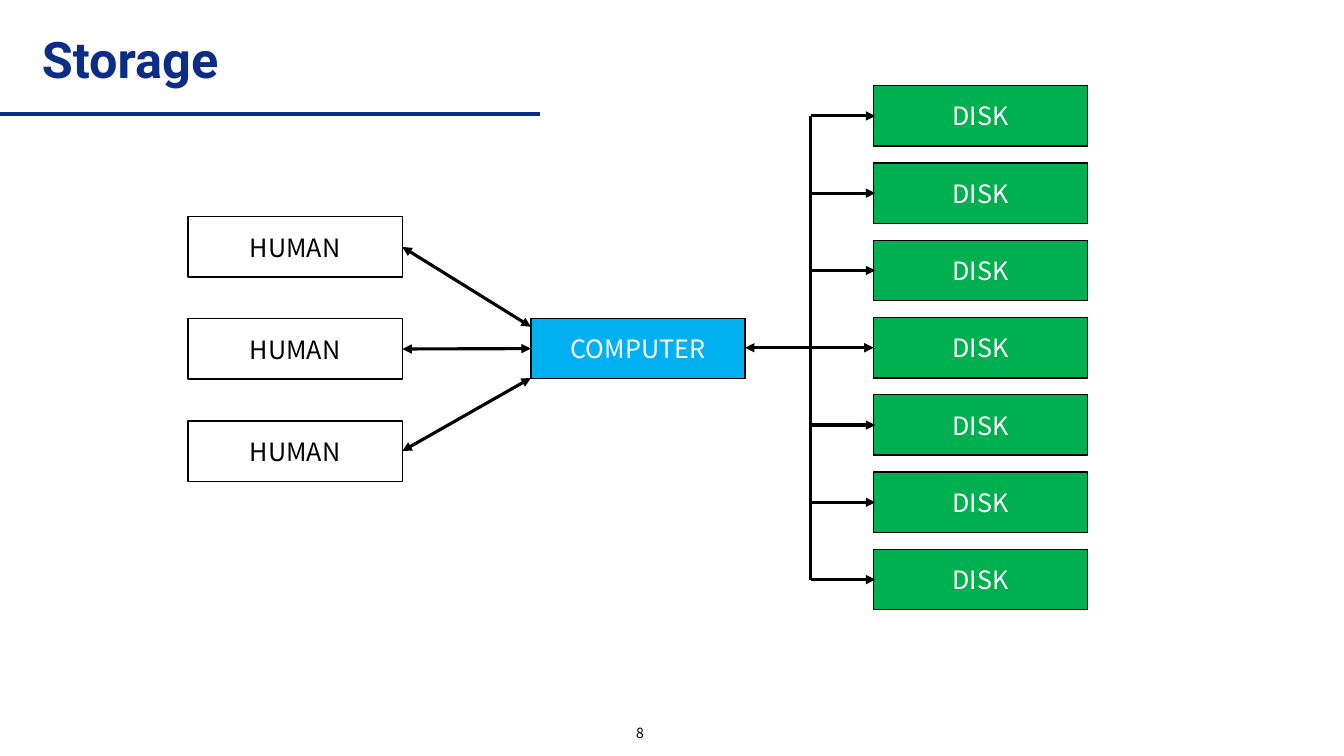
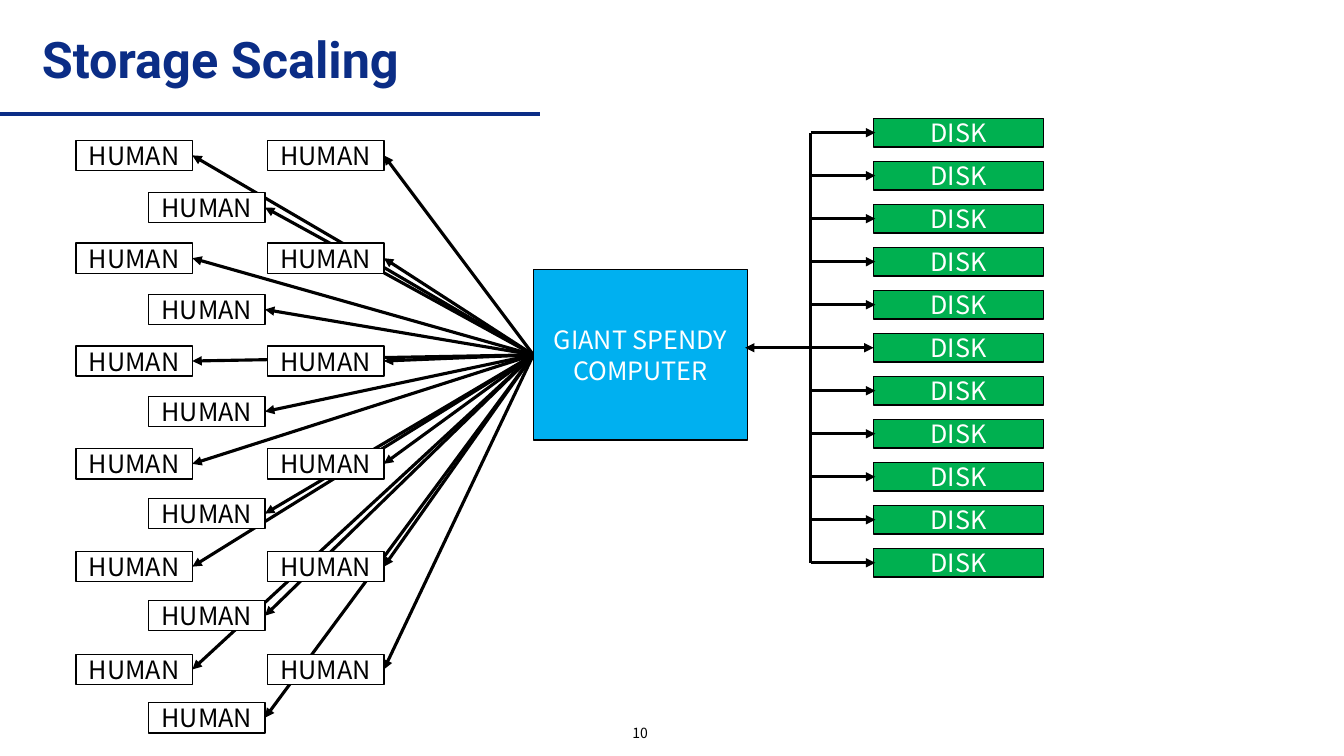
from lxml.etree import SubElement
from pptx import Presentation
from pptx.dml.color import RGBColor
from pptx.enum.shapes import MSO_CONNECTOR as LINE, MSO_SHAPE as SHAPE
from pptx.enum.text import MSO_ANCHOR as ANCHOR, PP_ALIGN as ALIGN
from pptx.oxml.ns import qn
from pptx.util import Inches, Pt

COLS, ROWS = 160, 90
WIDTH, HEIGHT = Inches(13.33), Inches(7.5)
COLORS = {"navy": "0B2D86", "black": "000000", "white": "FFFFFF",
          "blue": "00B0F0", "green": "00B050"}
BODY_FONT, TITLE_FONT = "Noto Sans CJK KR", "Roboto"
BLANK = 6

COMPUTER_W = 25.5
LINK_X, BUS_X, DISK_X = 88.7, 96.5, 104


def color(name):
    return RGBColor.from_string(COLORS[name])


class Deck:
    """Holds the style and the current slide; lengths are grid columns and rows."""

    def __init__(self):
        self.prs = Presentation()
        self.prs.slide_width, self.prs.slide_height = WIDTH, HEIGHT
        self.slide = None

    def emu(self, x, y):
        return int(x * WIDTH / COLS), int(y * HEIGHT / ROWS)

    def new_slide(self, title, number):
        self.slide = self.prs.slides.add_slide(self.prs.slide_layouts[BLANK])
        self.line((0, 13.6), (64.3, 13.6), "navy", 3)
        p = self.text(title, 3.8, 2.9, 110, 8.9, 36, "navy", TITLE_FONT)
        p.font.bold = True
        p.line_spacing = 0.9
        p = self.text(number, 58.2, 85.3, 36, 3.8, 10, "black")
        p.alignment = ALIGN.CENTER

    def set_text(self, sp, text, size, ink, font=BODY_FONT):
        tf = sp.text_frame
        tf.word_wrap = True
        tf.vertical_anchor = ANCHOR.MIDDLE
        p = tf.paragraphs[0]
        p.text = text
        p.font.size, p.font.name = Pt(size), font
        p.font.color.rgb = color(ink)
        return p

    def text(self, text, x, y, w, h, size, ink, font=BODY_FONT):
        sp = self.slide.shapes.add_textbox(*self.emu(x, y), *self.emu(w, h))
        return self.set_text(sp, text, size, ink, font)

    def box(self, text, x, middle, w, h, fill, ink="white"):
        """Draw a labelled box centred on the row `middle`."""
        sp = self.slide.shapes.add_shape(
            SHAPE.RECTANGLE, *self.emu(x, middle - h / 2), *self.emu(w, h))
        sp.shadow.inherit = False
        sp.fill.solid()
        sp.fill.fore_color.rgb = color(fill)
        sp.line.color.rgb = color("black")
        sp.line.width = Pt(1)
        self.set_text(sp, text, 18, ink).alignment = ALIGN.CENTER

    def line(self, start, end, ink="black", width=2.25, arrows=()):
        """Draw a line; `arrows` lists "headEnd" (start) and "tailEnd" (end), in that order."""
        c = self.slide.shapes.add_connector(
            LINE.STRAIGHT, *self.emu(*start), *self.emu(*end))
        c.line.color.rgb = color(ink)
        c.line.width = Pt(width)
        spPr = c.element.spPr
        for arrow in arrows:
            SubElement(spPr.find(qn("a:ln")), qn(f"a:{arrow}"), type="triangle")
        SubElement(spPr, qn("a:effectLst"))

    def human(self, x, middle, w, h):
        self.box("HUMAN", x, middle, w, h, "white", "black")

    def disks(self, count, first, pitch, w, h):
        """Stack disks on a shared bus; the middle one is joined to the computer."""
        middles = [first + i * pitch for i in range(count)]
        for i, y in enumerate(middles):
            self.box("DISK", DISK_X, y, w, h, "green")
            if i == count // 2:
                self.line((LINK_X, y), (DISK_X, y), arrows=("headEnd", "tailEnd"))
            else:
                self.line((BUS_X, y), (DISK_X + 0.2, y), arrows=("tailEnd",))
        self.line((BUS_X, middles[0]), (BUS_X, middles[-1]))


def storage(deck):
    deck.new_slide("Storage", "8")
    x, w, h, computer_x = 22.4, 25.5, 7.2, 63.2
    deck.box("COMPUTER", computer_x, 41.5, COMPUTER_W, h, "blue")
    for i, end in enumerate((38.9, 41.5, 45)):
        y = 29.4 + i * 12.15
        deck.human(x, y, w, h)
        deck.line((x + w, y), (computer_x, end), arrows=("headEnd", "tailEnd"))
    deck.disks(7, 13.8, 9.2, COMPUTER_W, h)


def storage_scaling(deck):
    deck.new_slide("Storage Scaling", "10")
    w, h, hub = 13.85, 3.6, (63.5, 42.25)
    columns = ((9.05, 18.5, 12.24), (17.7, 24.7, 12.15), (31.85, 18.5, 12.24))
    humans = [(x, first + i * pitch) for x, first, pitch in columns for i in range(6)]
    for x, y in humans:
        deck.line((x + w, y), hub, arrows=("headEnd",))
    for x, y in humans:
        deck.human(x, y, w, h)
    deck.box("GIANT SPENDY COMPUTER", *hub, COMPUTER_W, 20.3, "blue")
    deck.disks(11, 15.8, 5.12, 20.2, 3.4)


def main():
    deck = Deck()
    storage(deck)
    storage_scaling(deck)
    deck.prs.save("out.pptx")


if __name__ == "__main__":
    main()
